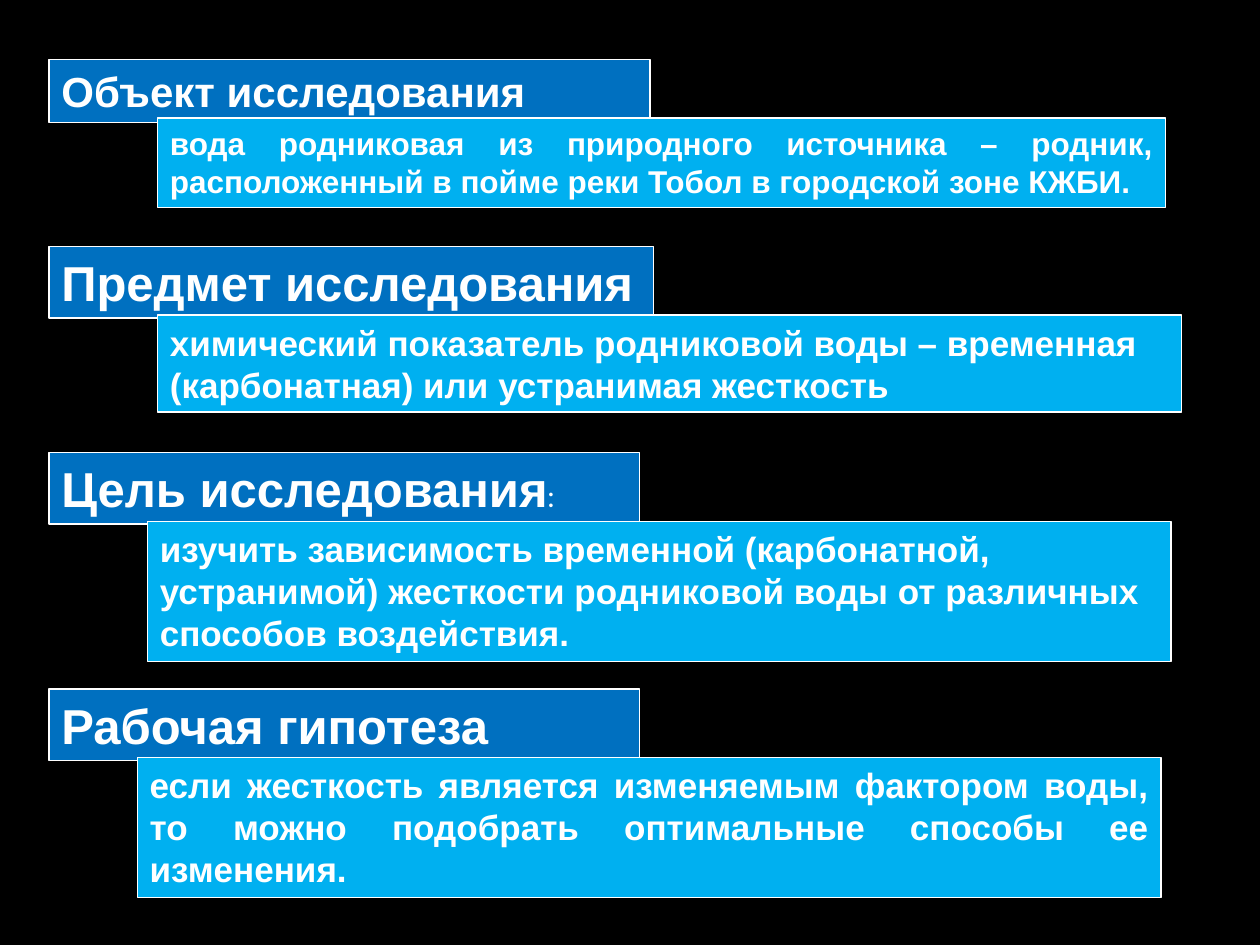
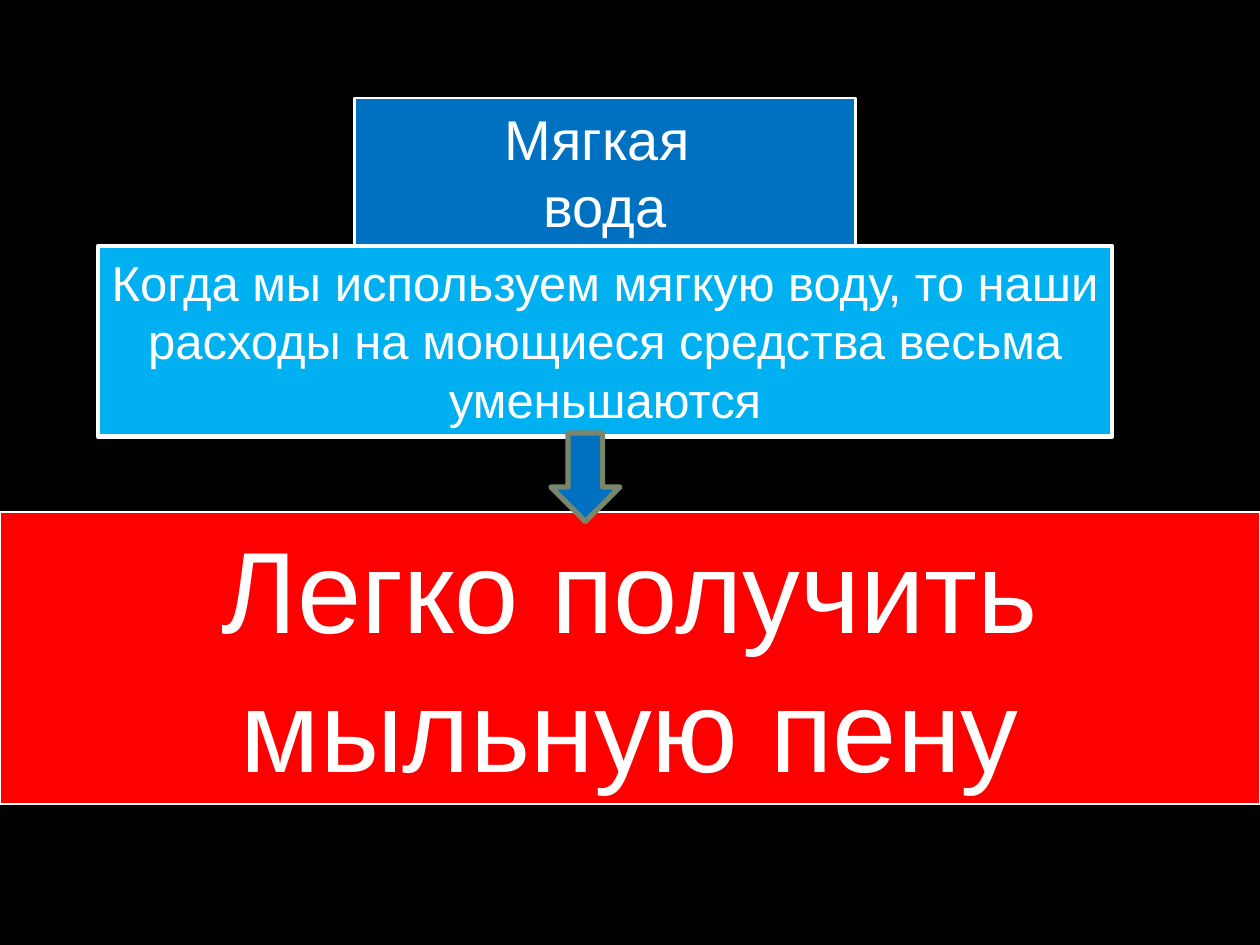
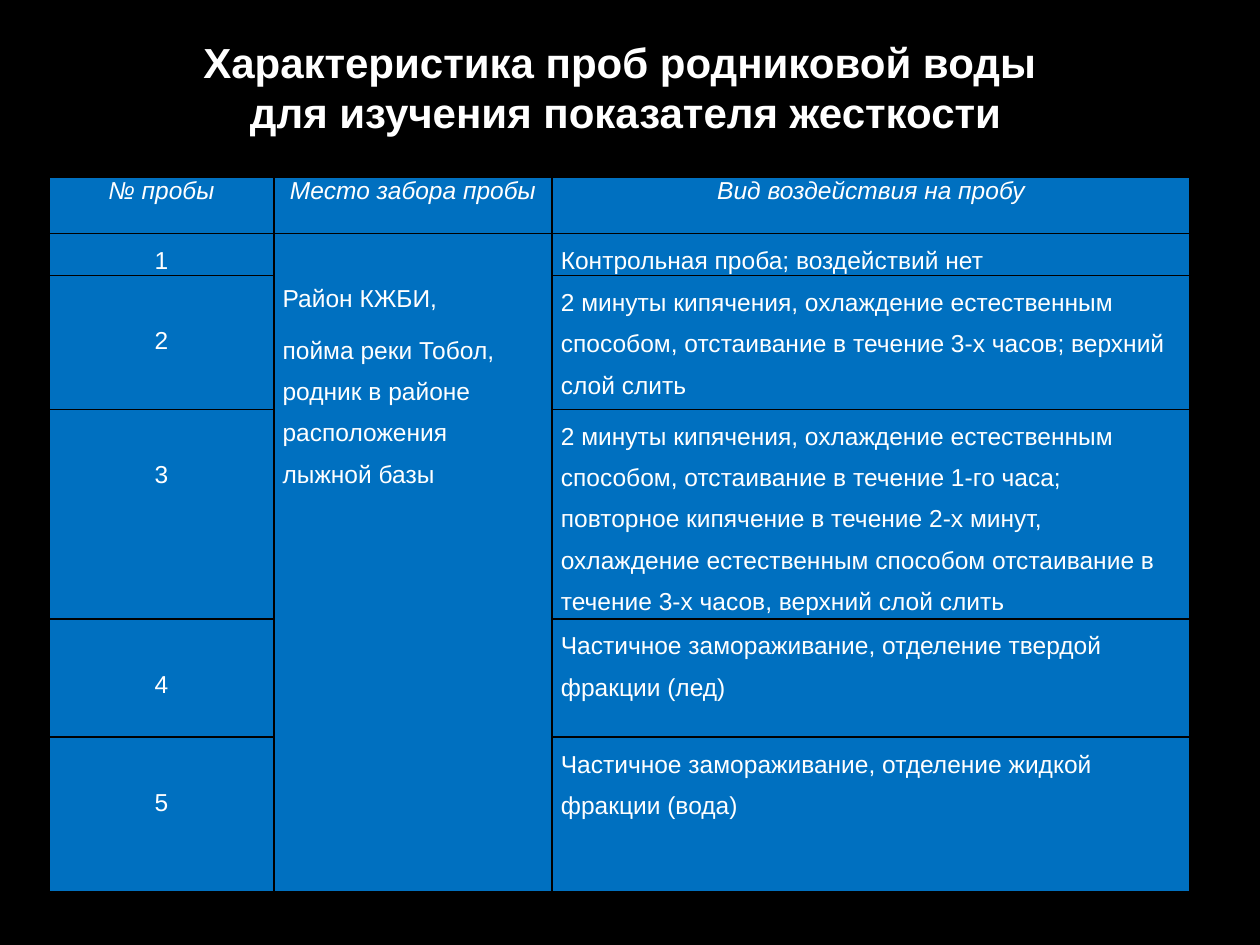
from lxml.etree import SubElement
from pptx import Presentation
from pptx.dml.color import RGBColor
from pptx.enum.shapes import MSO_SHAPE as Preset
from pptx.enum.text import MSO_ANCHOR as Anchor, MSO_AUTO_SIZE as AutoSize, PP_ALIGN as Align
from pptx.oxml.ns import qn
from pptx.util import Pt

COLORS = {
    "background": "000000",
    "heading": "0070C0",
    "detail": "00B0F0",
    "conclusion": "FF0000",
    "text": "FFFFFF",
    "arrow_line": "7A866C",
    "table_border": "000000",
}
FONT = "Arial"
COLON_FONT = "TeX Gyre Pagella"
TITLE_ONLY_LAYOUT, BLANK_LAYOUT = 5, 6

HEADING_LEFT = 28
RESEARCH_SECTIONS = [
    {"heading": "Объект исследования", "top": 34, "width": 343.5, "height": 36, "size": 24,
     "detail": "вода родниковая из природного источника – родник, "
               "расположенный в пойме реки Тобол в городской зоне КЖБИ.",
     "detail_box": (90, 67.5, 576, 51), "detail_size": 18, "align": Align.JUSTIFY},
    {"heading": "Предмет исследования", "top": 140.75, "width": 345.5, "height": 41, "size": 28,
     "detail": "химический показатель родниковой воды – временная "
               "(карбонатная) или устранимая жесткость",
     "detail_box": (90, 180, 585, 55.5), "detail_size": 20, "align": Align.LEFT},
    {"heading": "Цель исследования", "top": 258.5, "width": 337.5, "height": 41, "size": 28,
     "suffix": ":",
     "detail": "изучить зависимость временной (карбонатной, устранимой) жесткости "
               "родниковой воды от различных способов воздействия.",
     "detail_box": (84.25, 298, 585, 80), "detail_size": 20, "align": Align.LEFT},
    {"heading": "Рабочая гипотеза", "top": 393.75, "width": 337.5, "height": 41, "size": 28,
     "detail": "если жесткость является изменяемым фактором воды, то можно "
               "подобрать оптимальные способы ее изменения.",
     "detail_box": (78.5, 433, 585, 80), "detail_size": 20, "align": Align.JUSTIFY},
]

TABLE_HEADERS = ["№ пробы", "Место забора пробы", "Вид воздействия на пробу"]
SAMPLING_PLACE = "Район КЖБИ,\nпойма реки Тобол, родник в районе расположения лыжной базы"
TREATMENTS = [
    "Контрольная проба; воздействий нет",
    "2 минуты кипячения, охлаждение естественным способом, отстаивание "
    "в течение 3-х часов; верхний слой слить",
    "2 минуты кипячения, охлаждение естественным способом, отстаивание "
    "в течение 1-го часа; повторное кипячение в течение 2-х минут, охлаждение "
    "естественным способом отстаивание в течение 3-х часов, верхний слой слить",
    "Частичное замораживание, отделение твердой фракции (лед)",
    "Частичное замораживание, отделение жидкой фракции (вода)",
]
COLUMN_WIDTHS = [128.5, 159, 364.5]
ROW_HEIGHTS = [32, 24, 76.5, 119.75, 67.5, 88.5]
LOWERED_TEXT = 21.75


def color(name):
    """Return the named colour of the palette."""
    return RGBColor.from_string(COLORS[name])


def format_run(run, size, bold=False, italic=False, font=FONT):
    """Apply the common white lettering to one run."""
    run.font.name = font
    run.font.size = Pt(size)
    run.font.bold = bold
    run.font.italic = italic
    run.font.color.rgb = color("text")


def write(text_frame, text, size, align=Align.LEFT, bold=False, italic=False):
    """Fill a text frame, one paragraph per line of text."""
    text_frame.text = text
    for paragraph in text_frame.paragraphs:
        paragraph.alignment = align
        for run in paragraph.runs:
            format_run(run, size, bold, italic)


def paint(shape, fill, line, line_width):
    """Give a shape its fill and outline."""
    shape.fill.solid()
    shape.fill.fore_color.rgb = color(fill)
    shape.line.color.rgb = color(line)
    shape.line.width = Pt(line_width)


def add_preset(slide, preset, box, fill, line="text", line_width=0.75):
    """Add a painted preset shape without shadow."""
    shape = slide.shapes.add_shape(preset, *map(Pt, box))
    shape.shadow.inherit = False
    paint(shape, fill, line, line_width)
    return shape


def add_panel(slide, box, fill, text, size, align=Align.LEFT, bold=False, line_width=0.75):
    """Add an outlined rectangle with text from its top edge."""
    panel = add_preset(slide, Preset.RECTANGLE, box, fill, line_width=line_width)
    panel.text_frame.word_wrap = True
    panel.text_frame.vertical_anchor = Anchor.TOP
    write(panel.text_frame, text, size, align, bold)
    return panel


def set_title(slide, box, text, size, bold=False, anchor=Anchor.MIDDLE):
    """Place and fill the title placeholder."""
    title = slide.shapes.title
    title.left, title.top, title.width, title.height = map(Pt, box)
    title.text_frame.auto_size = AutoSize.NONE
    title.text_frame.word_wrap = True
    title.text_frame.vertical_anchor = anchor
    write(title.text_frame, text, size, Align.CENTER, bold)
    return title


def add_research_section(slide, section):
    """Add a section heading and the detail panel that overlaps it."""
    heading_box = (HEADING_LEFT, section["top"], section["width"], section["height"])
    heading = add_panel(slide, heading_box, "heading", section["heading"],
                        section["size"], bold=True)
    if "suffix" in section:
        run = heading.text_frame.paragraphs[0].add_run()
        run.text = section["suffix"]
        format_run(run, 18, font=COLON_FONT)
    add_panel(slide, section["detail_box"], "detail", section["detail"],
              section["detail_size"], section["align"], bold=True)


def add_cell_borders(cell):
    """Draw the four borders of a table cell."""
    properties = cell._tc.get_or_add_tcPr()
    for side in ("a:lnL", "a:lnR", "a:lnT", "a:lnB"):
        line = SubElement(properties, qn(side), w=str(Pt(1)))
        fill = SubElement(line, qn("a:solidFill"))
        SubElement(fill, qn("a:srgbClr"), val=COLORS["table_border"])


def style_cell(cell):
    """Give a table cell its margins, borders and fill."""
    cell.margin_left = cell.margin_right = Pt(5)
    cell.margin_top = cell.margin_bottom = 0
    add_cell_borders(cell)
    cell.fill.solid()
    cell.fill.fore_color.rgb = color("heading")


def write_cell(cell, text, align=Align.LEFT, header=False, lowered=False):
    """Fill a table cell with spaced paragraphs."""
    write(cell.text_frame, text, 14, align, italic=header)
    for paragraph in cell.text_frame.paragraphs:
        paragraph.space_after = Pt(6)
        paragraph.line_spacing = 1.0 if header else 1.5
    if lowered:
        cell.margin_top = Pt(LOWERED_TEXT)


def add_sample_table(slide):
    """Add the table of water samples and their treatments."""
    frame = slide.shapes.add_table(len(ROW_HEIGHTS), len(COLUMN_WIDTHS), Pt(28), Pt(101.5),
                                   Pt(sum(COLUMN_WIDTHS)), Pt(sum(ROW_HEIGHTS)))
    table = frame.table
    table.first_row = table.horz_banding = False
    for column, width in zip(table.columns, COLUMN_WIDTHS):
        column.width = Pt(width)
    for row, height in zip(table.rows, ROW_HEIGHTS):
        row.height = Pt(height)
        for cell in row.cells:
            style_cell(cell)
    for index, header in enumerate(TABLE_HEADERS):
        write_cell(table.cell(0, index), header, Align.CENTER, header=True)
    for number, treatment in enumerate(TREATMENTS, start=1):
        write_cell(table.cell(number, 0), str(number), Align.CENTER, lowered=number > 1)
        write_cell(table.cell(number, 2), treatment)
    place = table.cell(1, 1)
    place.merge(table.cell(len(TREATMENTS), 1))
    write_cell(place, SAMPLING_PLACE, lowered=True)


def add_slide(presentation, layout_index):
    """Append a slide with the given layout."""
    return presentation.slides.add_slide(presentation.slide_layouts[layout_index])


def build_research_slide(presentation):
    """Build the slide with object, subject, aim and hypothesis."""
    slide = add_slide(presentation, BLANK_LAYOUT)
    for section in RESEARCH_SECTIONS:
        add_research_section(slide, section)


def build_soft_water_slide(presentation):
    """Build the slide about the benefit of soft water."""
    slide = add_slide(presentation, TITLE_ONLY_LAYOUT)
    title = set_title(slide, (202.5, 56, 286.5, 85), "Мягкая \nвода", 32, anchor=Anchor.TOP)
    paint(title, "heading", "text", 1.5)
    add_panel(slide, (0, 292.5, 720, 167), "conclusion", "Легко получить мыльную пену",
              66, Align.CENTER, line_width=1.25)
    add_panel(slide, (56, 140.5, 579.5, 109), "detail",
              "Когда мы используем мягкую воду, то наши расходы на моющиеся "
              "средства весьма уменьшаются", 28, Align.CENTER, line_width=2.5)
    add_preset(slide, Preset.DOWN_ARROW, (314.75, 247.5, 39.5, 50.5), "heading", "arrow_line", 3)


def build_samples_slide(presentation):
    """Build the slide with the table of samples."""
    slide = add_slide(presentation, TITLE_ONLY_LAYOUT)
    set_title(slide, (106.5, 16.75, 502, 65.5),
              "Характеристика проб родниковой воды \nдля изучения показателя жесткости",
              24, bold=True)
    add_sample_table(slide)


def main():
    """Build and save the presentation."""
    presentation = Presentation()
    presentation.slide_width, presentation.slide_height = Pt(720), Pt(540)
    background = presentation.slide_master.background.fill
    background.solid()
    background.fore_color.rgb = color("background")
    build_research_slide(presentation)
    build_soft_water_slide(presentation)
    build_samples_slide(presentation)
    presentation.save("out.pptx")


if __name__ == "__main__":
    main()
